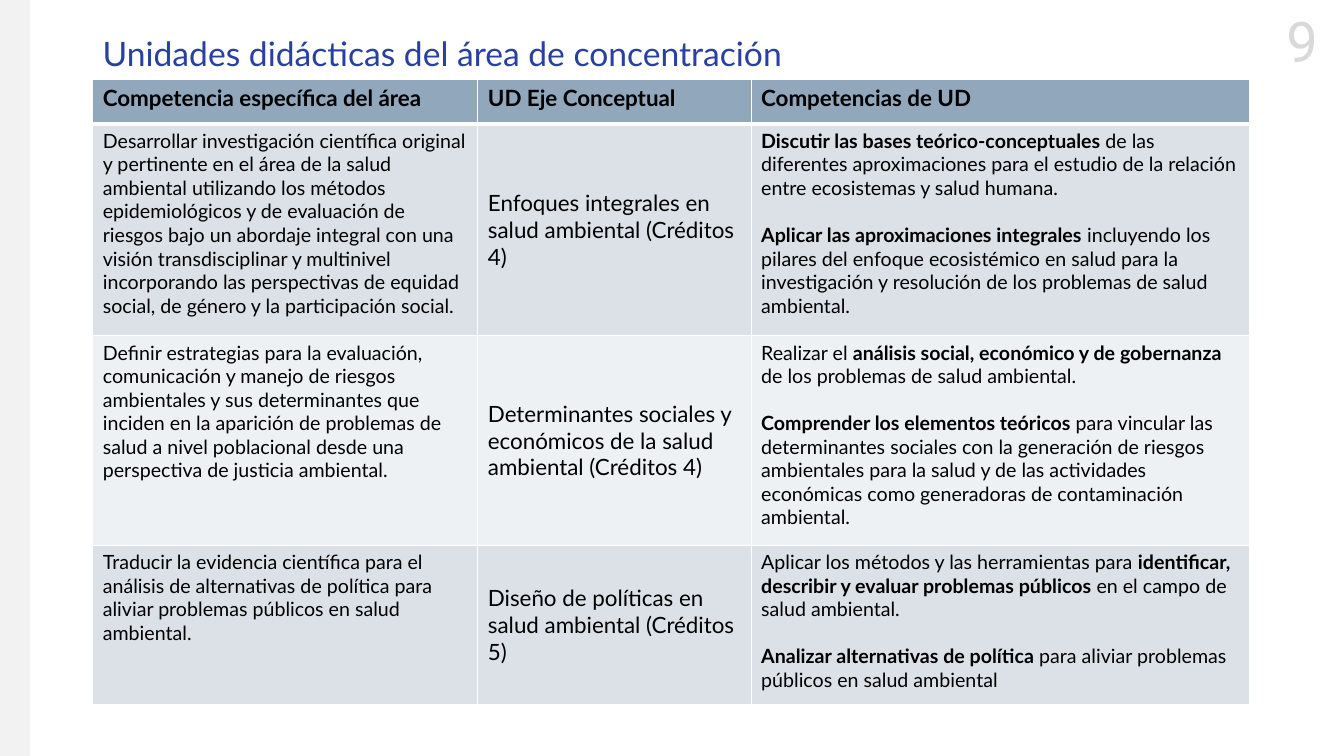
import pptx
import pptx.dml.color
import pptx.enum.shapes
import pptx.enum.text
import pptx.oxml
import pptx.oxml.ns
import pptx.util
from dataclasses import dataclass

Inches = pptx.util.Inches
Pt = pptx.util.Pt
RGBColor = pptx.dml.color.RGBColor
Align = pptx.enum.text.PP_ALIGN
Anchor = pptx.enum.text.MSO_ANCHOR


@dataclass(frozen=True)
class Theme:
    font: str = "Lato"
    number_font: str = "Roboto"
    title_size: int = 24
    number_size: int = 40
    heading_size: int = 16
    body_size: int = 14
    title: str = "2840A1"
    number: str = "D9D9D9"
    side_band: str = "F2F2F2"
    text: str = "000000"
    header_fill: str = "91A7BC"
    row_fills: tuple = ("DCE1E7", "EEF1F3")
    border: str = "FFFFFF"


theme = Theme()


def add_run(paragraph, text, size, color, font=theme.font, bold=False):
    run = paragraph.add_run()
    run.text = text
    run.font.name = font
    run.font.size = Pt(size)
    run.font.bold = bold
    run.font.color.rgb = RGBColor.from_string(color)


def add_borders(cell, bottom_width):
    """Draw the four cell borders; call before filling the cell."""
    properties = cell._tc.get_or_add_tcPr()
    for side, width in (("L", 1), ("R", 1), ("T", 1), ("B", bottom_width)):
        properties.append(pptx.oxml.parse_xml(
            f'<a:ln{side} {pptx.oxml.ns.nsdecls("a")} w="{Pt(width)}"><a:solidFill>'
            f'<a:srgbClr val="{theme.border}"/></a:solidFill></a:ln{side}>'))


presentation = pptx.Presentation()
presentation.slide_width = Inches(13.33)
presentation.slide_height = Inches(7.5)
slide = presentation.slides.add_slide(presentation.slide_layouts[6])

# Side band, page number and title
side_band = slide.shapes.add_shape(
    pptx.enum.shapes.MSO_SHAPE.RECTANGLE, 0, 0, Inches(0.3), Inches(7.5))
side_band.shadow.inherit = False
side_band.fill.solid()
side_band.fill.fore_color.rgb = RGBColor.from_string(theme.side_band)
side_band.line.fill.background()

page_number = slide.shapes.add_textbox(Inches(12.54), Inches(0.02), Inches(0.75), Inches(0.77))
page_number.text_frame.word_wrap = False
paragraph = page_number.text_frame.paragraphs[0]
paragraph.alignment = Align.CENTER
add_run(paragraph, "9", theme.number_size, theme.number, theme.number_font)

title = slide.shapes.add_textbox(Inches(0.92), Inches(0.18), Inches(11.5), Inches(0.75))
title.text_frame.word_wrap = True
title.text_frame.vertical_anchor = Anchor.MIDDLE
paragraph = title.text_frame.paragraphs[0]
paragraph.line_spacing = 0.9
add_run(paragraph, "Unidades didácticas del área de concentración", theme.title_size, theme.title)

# Each cell is a list of paragraphs; ** switches bold on and off
rows = [
    (["**Competencia específica del área**"], ["**UD Eje Conceptual**"], ["**Competencias de UD**"]),
    (
        ["Desarrollar investigación científica original y pertinente en el área de la salud "
         "ambiental utilizando los métodos epidemiológicos y de evaluación de riesgos bajo un "
         "abordaje integral con una visión transdisciplinar y multinivel incorporando las "
         "perspectivas de equidad social, de género y la participación social."],
        ["Enfoques integrales en salud ambiental (Créditos 4)"],
        ["**Discutir las bases teórico-conceptuales **de las diferentes aproximaciones para el "
         "estudio de la relación entre ecosistemas y salud humana.",
         "**Aplicar las aproximaciones integrales** incluyendo los pilares del enfoque "
         "ecosistémico en salud para la investigación y resolución de los problemas de salud "
         "ambiental."],
    ),
    (
        ["Definir estrategias para la evaluación, comunicación y manejo de riesgos ambientales y "
         "sus determinantes que inciden en la aparición de problemas de salud a nivel poblacional "
         "desde una perspectiva de justicia ambiental."],
        ["Determinantes sociales y económicos de la salud ambiental (Créditos 4)"],
        ["Realizar el **análisis social, económico y de gobernanza **de los problemas de salud "
         "ambiental.",
         "**Comprender los elementos teóricos **para vincular las determinantes sociales con la "
         "generación de riesgos ambientales para la salud y de las actividades económicas como "
         "generadoras de contaminación ambiental."],
    ),
    (
        ["Traducir la evidencia científica para el análisis de alternativas de política para "
         "aliviar problemas públicos en salud ambiental."],
        ["Diseño de políticas en salud ambiental (Créditos 5)"],
        ["Aplicar los métodos y las herramientas para **identificar, describir y evaluar problemas "
         "públicos **en el campo de salud ambiental.",
         "**Analizar alternativas de política **para aliviar problemas públicos en salud ambiental"],
    ),
]
column_widths = (3.82, 2.71, 4.94)
row_heights = (0.44, 2.1, 2.08, 1.58)

table = slide.shapes.add_table(
    len(rows), len(column_widths), Inches(0.92), Inches(0.79),
    Inches(sum(column_widths)), Inches(sum(row_heights))).table
for column, width in zip(table.columns, column_widths):
    column.width = Inches(width)
for table_row, height in zip(table.rows, row_heights):
    table_row.height = Inches(height)

for row_index, row in enumerate(rows):
    is_header = row_index == 0
    fill = theme.header_fill if is_header else theme.row_fills[(row_index - 1) % 2]
    for column_index, texts in enumerate(row):
        cell = table.cell(row_index, column_index)
        is_unit = column_index == 1 and not is_header
        size = theme.heading_size if is_header or is_unit else theme.body_size
        add_borders(cell, 3 if is_header else 1)
        cell.fill.solid()
        cell.fill.fore_color.rgb = RGBColor.from_string(fill)
        cell.vertical_anchor = Anchor.MIDDLE if is_unit else Anchor.TOP
        for text_index, text in enumerate(texts):
            if text_index == 0:
                paragraph = cell.text_frame.paragraphs[0]
            else:
                paragraph = cell.text_frame.add_paragraph()
                paragraph.space_before = Pt(1.2 * size)
            for part_index, part in enumerate(text.split("**")):
                if part:
                    add_run(paragraph, part, size, theme.text, bold=part_index % 2 == 1)

presentation.save("out.pptx")
